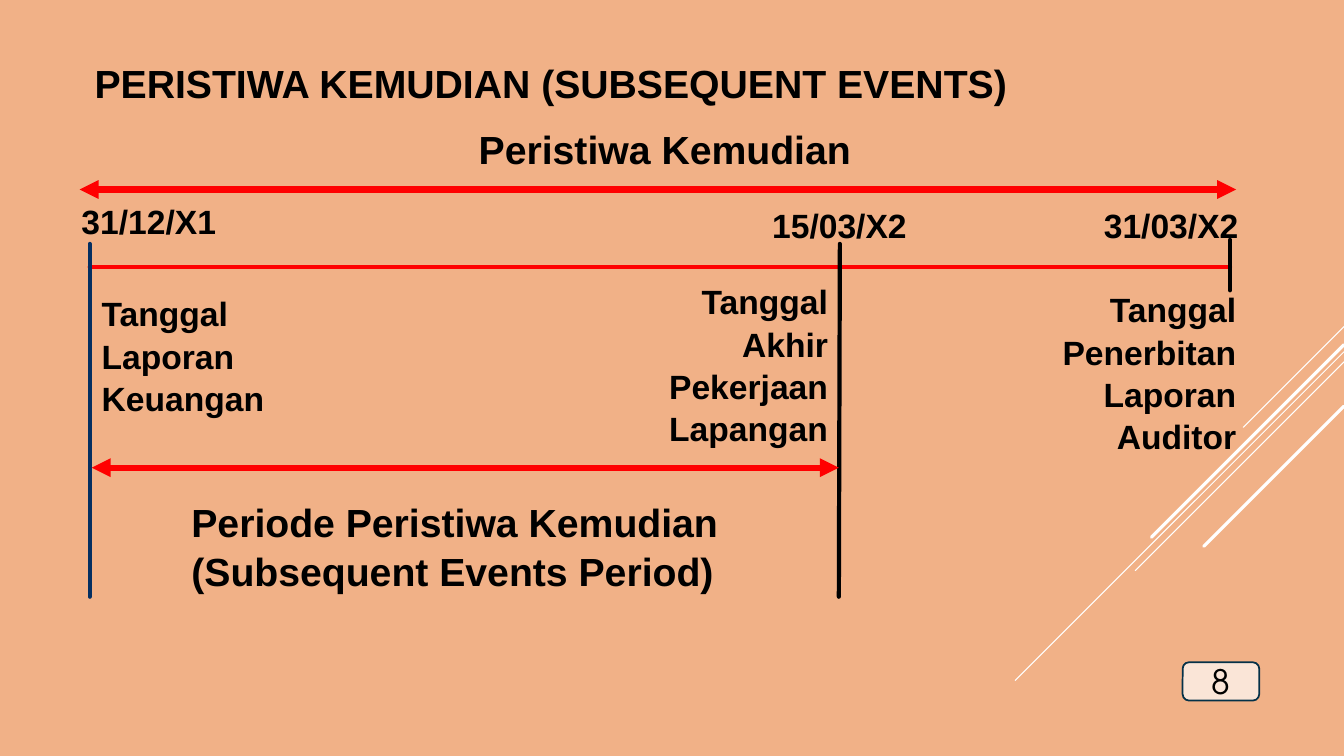
from dataclasses import dataclass

from lxml import etree
from pptx import Presentation
from pptx.dml.color import RGBColor
from pptx.enum.shapes import MSO_CONNECTOR, MSO_SHAPE
from pptx.enum.text import MSO_ANCHOR, PP_ALIGN
from pptx.oxml.ns import qn
from pptx.util import Pt

STRAIGHT = MSO_CONNECTOR.STRAIGHT
ROUNDED = MSO_SHAPE.ROUNDED_RECTANGLE
MIDDLE = MSO_ANCHOR.MIDDLE
TOP = MSO_ANCHOR.TOP
LEFT, CENTER, RIGHT = PP_ALIGN.LEFT, PP_ALIGN.CENTER, PP_ALIGN.RIGHT

EMU_PER_PX = 9144
COLORS = {
    "background": "F1B187",
    "stripe": "FFFFFF",
    "badge": "FAE5D7",
    "badge_border": "043148",
    "axis": "FF0000",
    "start": "052F61",
    "ink": "000000",
}


@dataclass(frozen=True)
class Line:
    x1: int
    y1: int
    x2: int
    y2: int
    color: str
    width: float
    arrows: bool = False


@dataclass(frozen=True)
class Label:
    left: int
    top: int
    width: int
    height: int
    lines: tuple[str, ...]
    size: int
    align: PP_ALIGN = LEFT
    anchor: MSO_ANCHOR = TOP


STRIPES = [
    Line(1333, y, 1333 - reach, y + reach, "stripe", width)
    for y, reach, width in [
        (324, 100, 0.75),
        (349, 326, 0.75),
        (359, 207, 0.75),
        (342, 191, 2.25),
        (403, 139, 2.25),
    ]
]

TIMELINE = [
    Line(89, 265, 1220, 265, "axis", 3),
    Line(89, 242, 89, 592, "start", 3),
    Line(833, 242, 832, 592, "ink", 3),
    Line(1220, 238, 1220, 288, "ink", 3),
    Line(79, 188, 1226, 188, "axis", 4.5, True),
    Line(91, 464, 832, 464, "axis", 4.5, True),
]

LABELS = [
    Label(84, 52, 933, 58, ("PERISTIWA KEMUDIAN (SUBSEQUENT EVENTS)",), 28, anchor=MIDDLE),
    Label(71, 192, 155, 50, ("31/12/X1",), 24),
    Label(756, 196, 155, 51, ("15/03/X2",), 24),
    Label(1085, 196, 155, 51, ("31/03/X2",), 24),
    Label(91, 284, 183, 131, ("Tanggal", "Laporan", "Keuangan"), 24),
    Label(652, 272, 179, 172, ("Tanggal", "Akhir", "Pekerjaan", "Lapangan"), 24, RIGHT),
    Label(1042, 280, 194, 172, ("Tanggal", "Penerbitan", "Laporan", "Auditor"), 24, RIGHT),
    Label(465, 117, 394, 57, ("Peristiwa Kemudian",), 28),
    Label(180, 487, 549, 104, ("Periode Peristiwa Kemudian", "(Subsequent Events Period)"), 28),
]


def px(value: int) -> int:
    return value * EMU_PER_PX


def rgb(name: str) -> RGBColor:
    return RGBColor.from_string(COLORS[name])


def draw_line(slide, line: Line) -> None:
    connector = slide.shapes.add_connector(
        STRAIGHT, px(line.x1), px(line.y1), px(line.x2), px(line.y2)
    )
    connector.line.color.rgb = rgb(line.color)
    connector.line.width = Pt(line.width)
    outline = connector.line._get_or_add_ln()
    outline.set("cap", "rnd")
    if line.arrows:
        for end in ("a:headEnd", "a:tailEnd"):
            etree.SubElement(outline, qn(end), type="triangle")
    etree.SubElement(connector._element.spPr, qn("a:effectLst"))


def add_text(paragraph, text: str, size: int, font: str, bold: bool) -> None:
    run = paragraph.add_run()
    run.text = text
    run.font.name = font
    run.font.size = Pt(size)
    run.font.bold = bold
    run.font.color.rgb = rgb("ink")


def draw_label(slide, label: Label) -> None:
    box = slide.shapes.add_textbox(
        px(label.left), px(label.top), px(label.width), px(label.height)
    )
    frame = box.text_frame
    frame.word_wrap = False
    frame.vertical_anchor = label.anchor
    for index, text in enumerate(label.lines):
        paragraph = frame.add_paragraph() if index else frame.paragraphs[0]
        paragraph.alignment = label.align
        paragraph.line_spacing = 1.05
        add_text(paragraph, text, label.size, "Arial", True)


def draw_page_number(slide) -> None:
    badge = slide.shapes.add_shape(ROUNDED, px(1173), px(657), px(76), px(38))
    badge.shadow.inherit = False
    badge.fill.solid()
    badge.fill.fore_color.rgb = rgb("badge")
    badge.line.color.rgb = rgb("badge_border")
    badge.line.width = Pt(1.25)
    badge.text_frame.vertical_anchor = MIDDLE
    paragraph = badge.text_frame.paragraphs[0]
    paragraph.alignment = CENTER
    add_text(paragraph, "8", 24, "TeX Gyre Adventor", False)


def main() -> None:
    presentation = Presentation()
    presentation.slide_width = px(1333)
    presentation.slide_height = px(750)
    slide = presentation.slides.add_slide(presentation.slide_layouts[6])
    slide.background.fill.solid()
    slide.background.fill.fore_color.rgb = rgb("background")
    for line in STRIPES:
        draw_line(slide, line)
    draw_page_number(slide)
    for line in TIMELINE:
        draw_line(slide, line)
    for label in LABELS:
        draw_label(slide, label)
    presentation.save("out.pptx")


if __name__ == "__main__":
    main()
